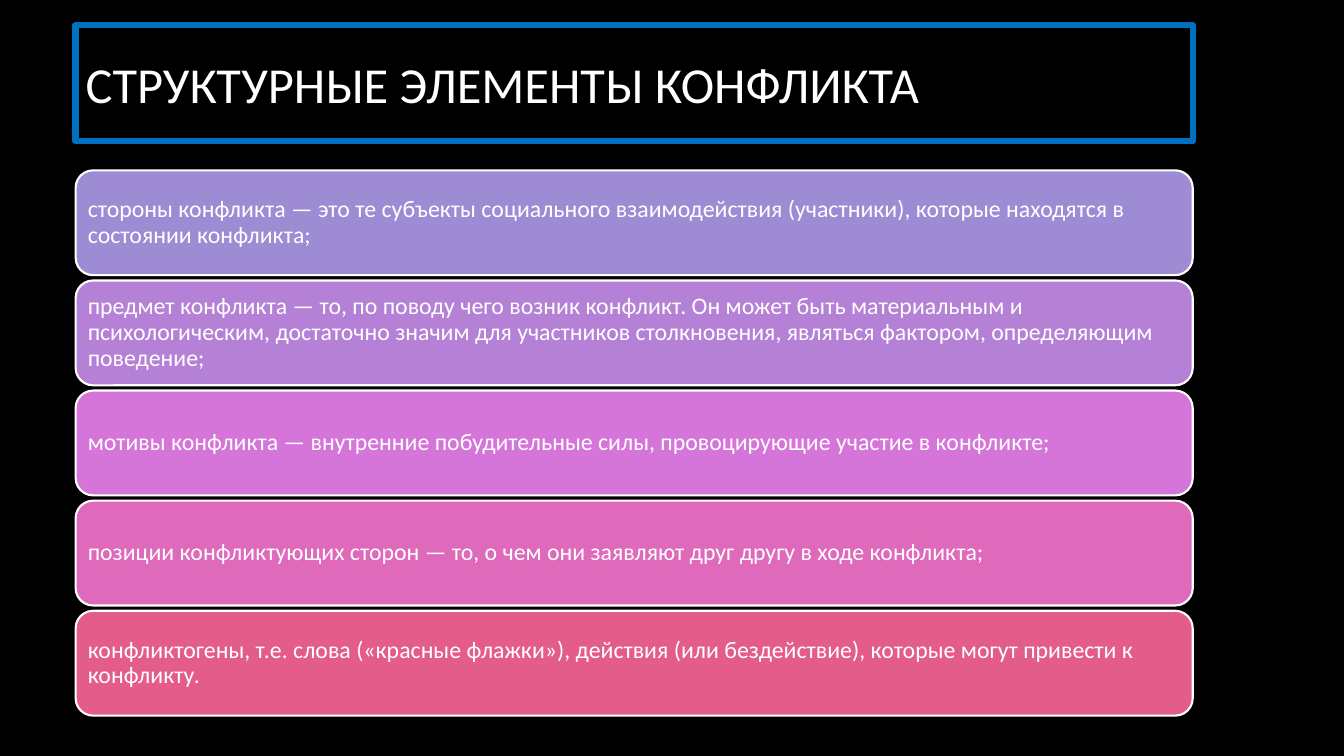
from dataclasses import dataclass

from pptx import Presentation
from pptx.dml.color import RGBColor
from pptx.enum.shapes import MSO_SHAPE
from pptx.enum.text import MSO_ANCHOR, MSO_AUTO_SIZE, PP_ALIGN
from pptx.slide import Slide
from pptx.text.text import TextFrame
from pptx.util import Inches, Pt

BLACK = RGBColor(0x00, 0x00, 0x00)
WHITE = RGBColor(0xFF, 0xFF, 0xFF)
BLUE = RGBColor(0x00, 0x70, 0xC0)
LAVENDER = RGBColor(0x9D, 0x8C, 0xD3)
VIOLET = RGBColor(0xB4, 0x81, 0xD6)
ORCHID = RGBColor(0xD5, 0x75, 0xDA)
PINK = RGBColor(0xDF, 0x69, 0xBB)
ROSE = RGBColor(0xE4, 0x5C, 0x8A)

FONT = "Calibri"
LEFT, WIDTH = 0.75, 11.08
FIRST_TOP, LAST_TOP, BAR_HEIGHT = 1.69, 6.06, 1.04


@dataclass(frozen=True)
class Element:
    text: str
    color: RGBColor


ELEMENTS = [
    Element("стороны конфликта — это те субъекты социального взаимодействия "
            "(участники), которые находятся в состоянии конфликта;", LAVENDER),
    Element("предмет конфликта — то, по поводу чего возник конфликт. Он может быть "
            "материальным и психологическим, достаточно значим для участников "
            "столкновения, являться фактором, определяющим поведение;", VIOLET),
    Element("мотивы конфликта — внутренние побудительные силы, провоцирующие "
            "участие в конфликте;", ORCHID),
    Element("позиции конфликтующих сторон — то, о чем они заявляют друг другу "
            "в ходе конфликта;", PINK),
    Element("конфликтогены, т.е. слова («красные флажки»), действия (или "
            "бездействие), которые могут привести к конфликту.", ROSE),
]


def write(tf: TextFrame, text: str, size: float) -> None:
    tf.text = text
    tf.word_wrap = True
    tf.auto_size = MSO_AUTO_SIZE.NONE
    tf.vertical_anchor = MSO_ANCHOR.MIDDLE
    p = tf.paragraphs[0]
    p.alignment = PP_ALIGN.LEFT
    p.font.name = FONT
    p.font.size = Pt(size)
    p.font.color.rgb = WHITE


def add_title(s: Slide, text: str) -> None:
    sp = s.shapes.title
    sp.left, sp.top = Inches(LEFT), Inches(0.25)
    sp.width, sp.height = Inches(WIDTH), Inches(1.15)
    sp.line.color.rgb = BLUE
    sp.line.width = Pt(4.5)
    write(sp.text_frame, text, 36)


def add_bar(s: Slide, element: Element, top: float) -> None:
    sp = s.shapes.add_shape(MSO_SHAPE.ROUNDED_RECTANGLE, Inches(LEFT), Inches(top),
                            Inches(WIDTH), Inches(BAR_HEIGHT))
    sp.shadow.inherit = False
    sp.fill.solid()
    sp.fill.fore_color.rgb = element.color
    sp.line.color.rgb = WHITE
    sp.line.width = Pt(1.5)
    tf = sp.text_frame
    write(tf, element.text, 17)
    tf.margin_left = tf.margin_right = Inches(0.07)
    tf.margin_top = tf.margin_bottom = Inches(0.07)
    tf.paragraphs[0].line_spacing = 0.9


def main() -> None:
    prs = Presentation()
    prs.slide_width, prs.slide_height = Inches(13.33), Inches(7.5)
    s = prs.slides.add_slide(prs.slide_layouts[5])
    s.background.fill.solid()
    s.background.fill.fore_color.rgb = BLACK
    add_title(s, "СТРУКТУРНЫЕ ЭЛЕМЕНТЫ КОНФЛИКТА")
    pitch = (LAST_TOP - FIRST_TOP) / (len(ELEMENTS) - 1)
    for i, element in enumerate(ELEMENTS):
        add_bar(s, element, FIRST_TOP + i * pitch)
    prs.save("out.pptx")


if __name__ == "__main__":
    main()
